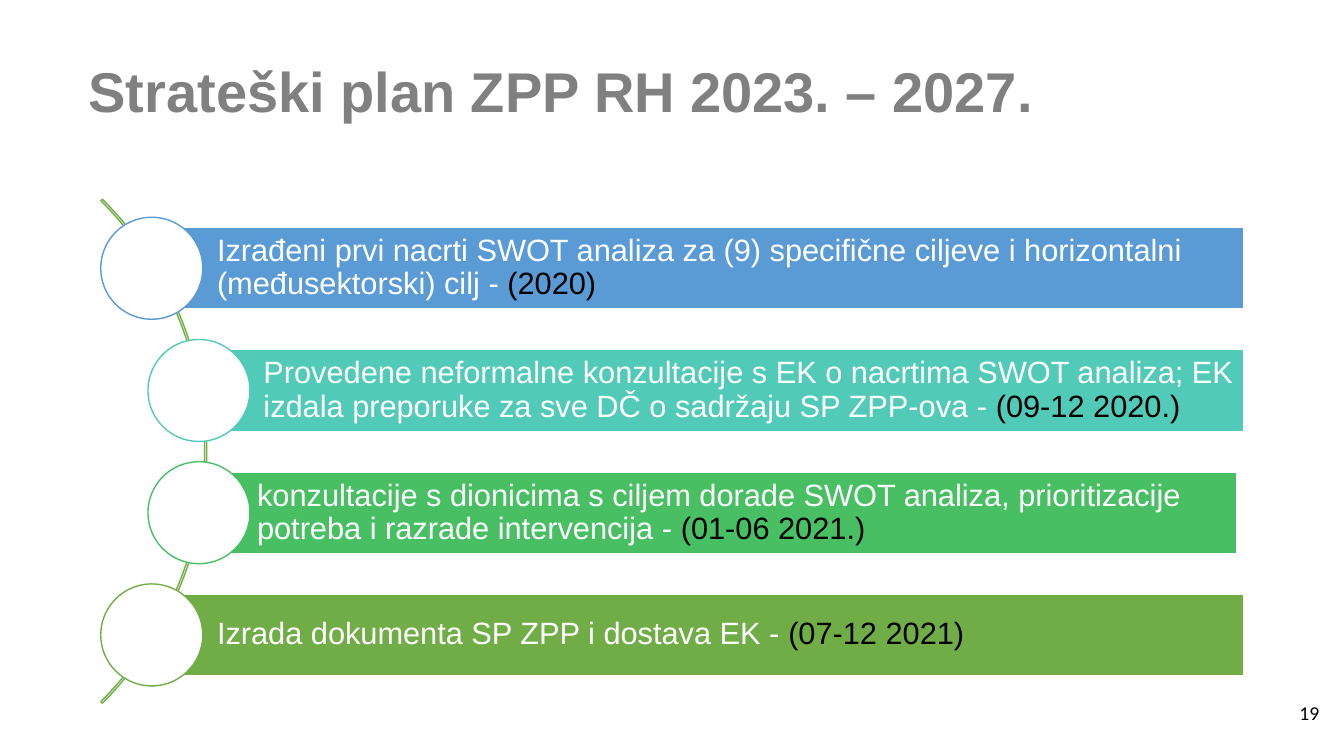
from pptx import Presentation
from pptx.dml.color import RGBColor
from pptx.enum.shapes import MSO_SHAPE
from pptx.enum.text import MSO_ANCHOR, MSO_AUTO_SIZE, PP_ALIGN
from pptx.util import Cm, Pt

ARC, RECT, OVAL = MSO_SHAPE.BLOCK_ARC, MSO_SHAPE.RECTANGLE, MSO_SHAPE.OVAL
MIDDLE = MSO_ANCHOR.MIDDLE
LEFT, RIGHT = PP_ALIGN.LEFT, PP_ALIGN.RIGHT
NO_FIT = MSO_AUTO_SIZE.NONE

COLORS = {
    "white": "FFFFFF", "black": "000000", "gray": "808080",
    "blue": "5B9BD5", "teal": "52CAB8", "green": "49BF64", "olive": "70AD47",
}


def add_run(para, text, size, color, font="Arial", bold=False):
    run = para.add_run()
    run.text = text
    run.font.name = font
    run.font.size = Pt(size)
    run.font.bold = bold
    run.font.color.rgb = RGBColor.from_string(COLORS[color])


def add_part(kind, left, top, width, height, fill, line):
    part = slide.shapes.add_shape(kind, Cm(left), Cm(top), Cm(width), Cm(height))
    part.shadow.inherit = False
    if fill:
        part.fill.solid()
        part.fill.fore_color.rgb = RGBColor.from_string(COLORS[fill])
    else:
        part.fill.background()
    part.line.color.rgb = RGBColor.from_string(COLORS[line])
    part.line.width = Pt(1)
    return part


prs = Presentation()
prs.slide_width, prs.slide_height = Cm(33.87), Cm(19.05)
slide = prs.slides.add_slide(prs.slide_layouts[5])

# Title
title = slide.shapes.title
title.left, title.top, title.width, title.height = Cm(1.98), Cm(0.53), Cm(29.21), Cm(3.68)
frame = title.text_frame
frame.auto_size = NO_FIT
frame.vertical_anchor = MIDDLE
para = frame.paragraphs[0]
para.alignment = LEFT
para.line_spacing = 0.9
add_run(para, "Strateški plan ZPP RH 2023. – 2027.", 40, "gray", bold=True)

# Slide number
box = slide.shapes.add_textbox(Cm(32.31), Cm(17.55), Cm(1.19), Cm(1.02))
box.text_frame.word_wrap = True
para = box.text_frame.paragraphs[0]
para.alignment = RIGHT
add_run(para, "19", 14, "black", font="Calibri")

# Arc behind the steps, from 315 to 45 degrees
arc = add_part(ARC, -12.75, 2.39, 17.96, 17.96, None, "olive")
for i, value in enumerate((189, 27, 0.003)):
    arc.adjustments[i] = value

# Steps: color, bar left, bar width, circle left, text, date
STEPS = [
    ("blue", 3.84, 27.5, 2.54,
     "Izrađeni prvi nacrti SWOT analiza za (9) specifične ciljeve i horizontalni "
     "(međusektorski) cilj - ", "(2020)"),
    ("teal", 5.01, 26.33, 3.73,
     "Provedene neformalne konzultacije s EK o nacrtima SWOT analiza; EK izdala "
     "preporuke za sve DČ o sadržaju SP ZPP-ova - ", "(09-12 2020.)"),
    ("green", 4.85, 26.33, 3.73,
     "konzultacije s dionicima s ciljem dorade SWOT analiza, prioritizacije "
     "potreba i razrade intervencija - ", "(01-06 2021.)"),
    ("olive", 3.84, 27.5, 2.54,
     "Izrada dokumenta SP ZPP i dostava EK - ", "(07-12 2021)"),
]
FIRST, PITCH = 6.76, 3.08
BAR, DISC = 2.06, 2.57

for i, (color, left, width, disc, text, date) in enumerate(STEPS):
    mid = FIRST + i * PITCH
    bar = add_part(RECT, left, mid - BAR / 2, width, BAR, color, "white")
    frame = bar.text_frame
    frame.word_wrap = True
    frame.vertical_anchor = MIDDLE
    frame.margin_left = Cm(1.63)
    frame.margin_top = frame.margin_right = frame.margin_bottom = Cm(0.15)
    para = frame.paragraphs[0]
    para.alignment = LEFT
    para.line_spacing = 0.9
    add_run(para, text, 22, "white")
    add_run(para, date, 22, "black")
    add_part(OVAL, disc, mid - DISC / 2, DISC, DISC, "white", color)

prs.save("out.pptx")
